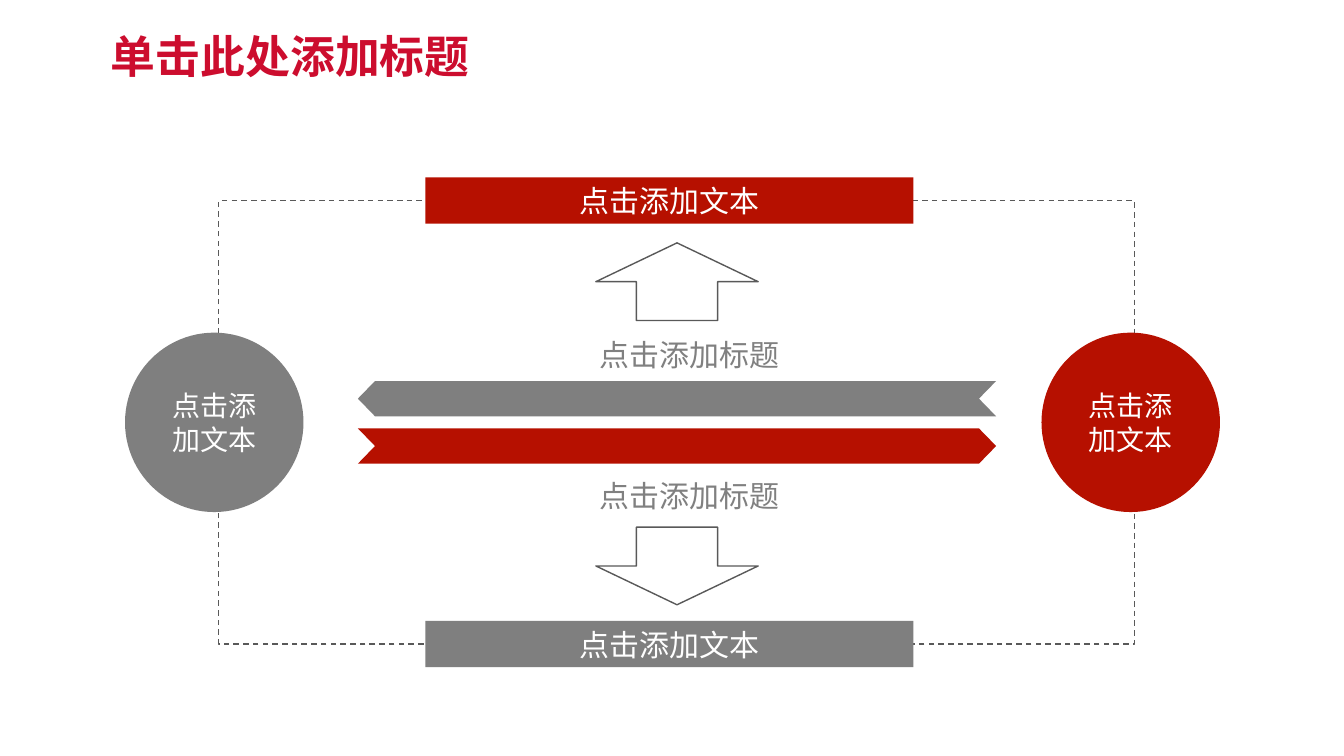
from pptx import Presentation
from pptx.dml.color import RGBColor
from pptx.enum.dml import MSO_LINE
from pptx.enum.shapes import MSO_SHAPE
from pptx.enum.text import MSO_ANCHOR, PP_ALIGN
from pptx.oxml.ns import qn
from pptx.util import Inches, Pt

RECT, OVAL = MSO_SHAPE.RECTANGLE, MSO_SHAPE.OVAL
UP, DOWN = MSO_SHAPE.UP_ARROW, MSO_SHAPE.DOWN_ARROW
DASH, MIDDLE = MSO_LINE.DASH, MSO_ANCHOR.MIDDLE
LEFT, CENTER = PP_ALIGN.LEFT, PP_ALIGN.CENTER


class Theme:
    red, gray, title = "B61000", "7F7F7F", "CC0D2E"
    line, label, white = "595959", "808080", "FFFFFF"
    head, body = "Montserrat", "Noto Sans CJK SC"
    title_size, bar_size, disc_size = 32, 21.4, 20


# Content
TITLE = "单击此处添加标题"
DISCS = [("点击添加文本", 1.24, Theme.gray), ("点击添加文本", 10.33, Theme.red)]
BARS = [("点击添加文本", 1.76, Theme.red), ("点击添加文本", 6.16, Theme.gray)]
LABELS = [("点击添加标题", 3.29), ("点击添加标题", 4.69)]
ARROWS = [(UP, 2.41), (DOWN, 5.23)]
# Ribbon top, end it points to (-1 left, 1 right), colour
RIBBONS = [(3.78, -1, Theme.gray), (4.25, 1, Theme.red)]
RIB_LEFT, RIB_W, RIB_H, NOTCH = 3.55, 6.33, 0.35, 0.17


def rgb(code):
    return RGBColor.from_string(code)


def write(shape, text, size, color, align=CENTER, font=Theme.body, bold=False):
    frame = shape.text_frame
    frame.vertical_anchor = MIDDLE
    para = frame.paragraphs[0]
    para.alignment = align
    run = para.add_run()
    run.text = text
    run.font.size, run.font.bold, run.font.name = Pt(size), bold, font
    run.font.color.rgb = rgb(color)
    east = run.font._element.makeelement(qn("a:ea"), {"typeface": Theme.body})
    run.font._element.find(qn("a:latin")).addnext(east)
    return para


def paint(shape, fill=None, line=None):
    shape.shadow.inherit = False
    if fill:
        shape.fill.solid()
        shape.fill.fore_color.rgb = rgb(fill)
    else:
        shape.fill.background()
    if line:
        shape.line.color.rgb = rgb(line)
        shape.line.width = Pt(1)
    else:
        shape.line.fill.background()


def add(kind, x, y, w, h, fill=None, line=None):
    shape = slide.shapes.add_shape(kind, *map(Inches, (x, y, w, h)))
    paint(shape, fill, line)
    return shape


def ribbon(top, way, color):
    mid = RIB_LEFT + RIB_W / 2
    tail, tip = mid - way * RIB_W / 2, mid + way * RIB_W / 2
    step = way * NOTCH
    low, half = top + RIB_H, top + RIB_H / 2
    dots = [(tail, top), (tip - step, top), (tip, half),
            (tip - step, low), (tail, low), (tail + step, half)]
    dots = [(Inches(x), Inches(y)) for x, y in dots]
    form = slide.shapes.build_freeform(*dots[0])
    form.add_line_segments(dots[1:], close=True)
    paint(form.convert_to_shape(), color)


deck = Presentation()
deck.slide_width, deck.slide_height = Inches(13.33), Inches(7.5)
slide = deck.slides.add_slide(deck.slide_layouts[5])

# Title
title = slide.shapes.title
title.left, title.top = Inches(1), Inches(0.28)
title.width, title.height = Inches(11.5), Inches(0.62)
para = write(title, TITLE, Theme.title_size, Theme.title, LEFT, Theme.head, True)
para.line_spacing = 0.9

# Dashed frame behind the cycle
frame = add(RECT, 2.17, 1.99, 9.08, 4.4, line=Theme.line)
frame.line.dash_style = DASH

# Discs on the sides
for text, x, color in DISCS:
    disc = add(OVAL, x, 3.3, 1.77, 1.78, color)
    write(disc, text, Theme.disc_size, Theme.white)

# Labels above and below the ribbons
for text, y in LABELS:
    box = slide.shapes.add_textbox(*map(Inches, (5.85, y, 2, 0.46)))
    box.text_frame.word_wrap = False
    write(box, text, Theme.bar_size, Theme.label, LEFT)

# Outlined arrows
for kind, y in ARROWS:
    add(kind, 5.91, y, 1.61, 0.77, line=Theme.line)

# Bars at top and bottom
for text, y, color in BARS:
    bar = add(RECT, 4.22, y, 4.84, 0.46, color)
    write(bar, text, Theme.bar_size, Theme.white)

# Opposed ribbons
for top, way, color in RIBBONS:
    ribbon(top, way, color)

deck.save("out.pptx")
